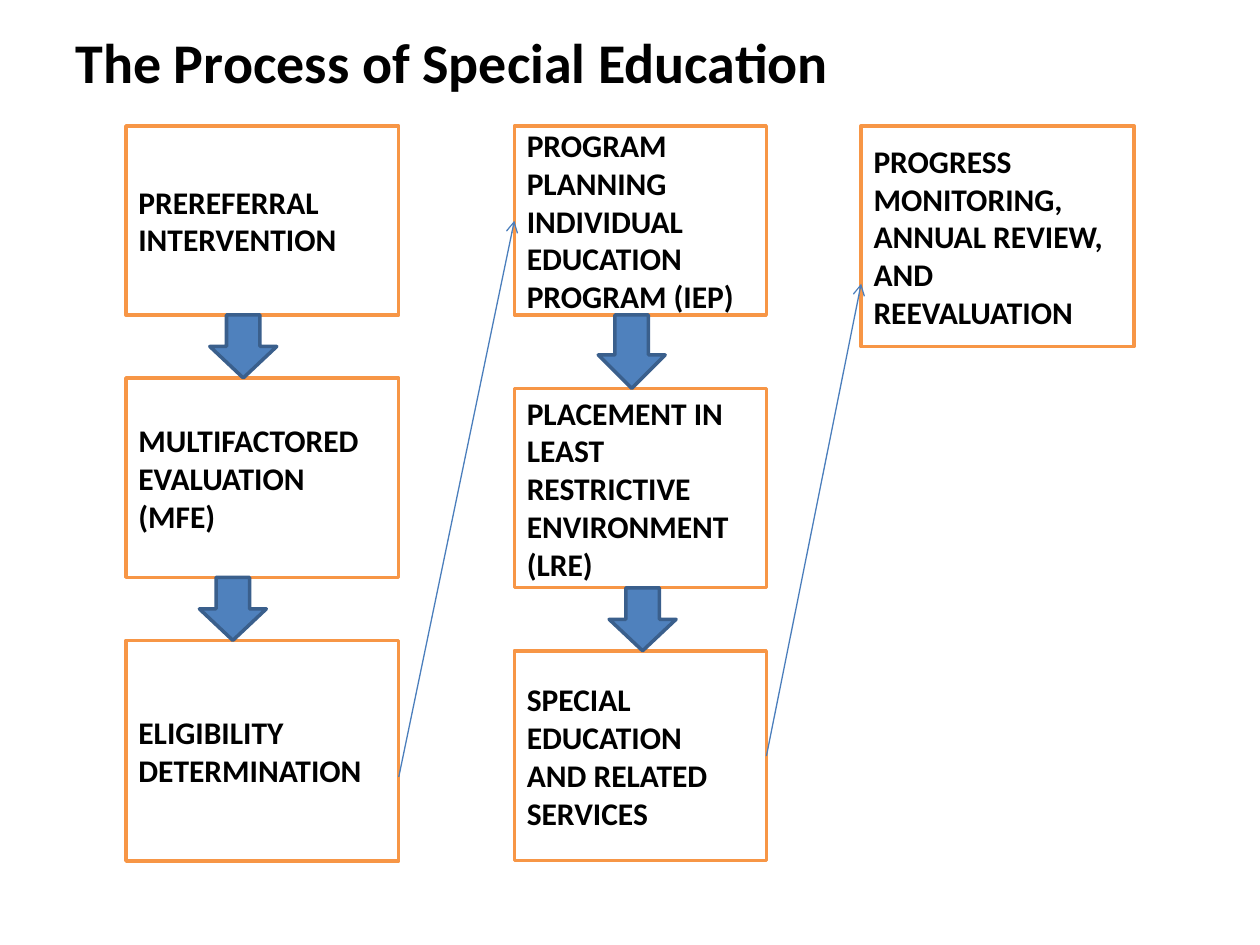
import pptx
import pptx.dml.color
import pptx.enum.shapes
import pptx.enum.text
import pptx.oxml.ns
import pptx.util
from lxml import etree

Cm, Pt = pptx.util.Cm, pptx.util.Pt
SHAPES = pptx.enum.shapes.MSO_SHAPE
ANCHOR = pptx.enum.text.MSO_ANCHOR

TITLE = "The Process of Special Education"

# Lengths in cm. Each step: top, height, lines of text.
# Each down arrow is given by its left edge and fills the gap between two steps.
COLUMNS = [
    {"left": 2.54, "width": 5.5, "arrows": [4.23, 4.02], "steps": [
        (2.54, 3.81, ["PREREFERRAL", "INTERVENTION"]),
        (7.62, 4.02, ["MULTIFACTORED", "EVALUATION (MFE)"]),
        (12.91, 4.45, ["ELIGIBILITY", "DETERMINATION"])]},
    {"left": 10.37, "width": 5.08, "arrows": [12.06, 12.28], "steps": [
        (2.54, 3.81, ["PROGRAM PLANNING", "INDIVIDUAL EDUCATION", "PROGRAM (IEP)"]),
        (7.83, 4.02, ["PLACEMENT IN LEAST", "RESTRICTIVE", "ENVIRONMENT (LRE)"]),
        (13.12, 4.23, ["SPECIAL EDUCATION", "AND RELATED SERVICES"])]},
    {"left": 17.36, "width": 5.5, "arrows": [], "steps": [
        (2.54, 4.45, ["PROGRESS MONITORING,", "ANNUAL REVIEW,", "AND REEVALUATION"])]},
]
# Start and end heights of the links from each column to the next
LINKS = [(15.66, 4.45), (15.24, 5.72)]
ARROW_WIDTH = 1.35
FONT = {"name": "Calibri", "bold": True}


def color(value):
    return pptx.dml.color.RGBColor.from_string(value)


def write(shape, lines, size, anchor):
    frame = shape.text_frame
    frame.word_wrap = True
    frame.vertical_anchor = anchor
    for number, line in enumerate(lines):
        para = frame.add_paragraph() if number else frame.paragraphs[0]
        para.alignment = pptx.enum.text.PP_ALIGN.LEFT
        span = para.add_run()
        span.text = line
        for key, value in {**FONT, "size": Pt(size)}.items():
            setattr(span.font, key, value)
        span.font.color.rgb = color("000000")


def add_block(page, kind, place, fill, line):
    block = page.shapes.add_shape(kind, *map(Cm, place))
    block.shadow.inherit = False
    block.fill.solid()
    block.fill.fore_color.rgb = color(fill)
    block.line.color.rgb = color(line)
    block.line.width = Pt(2)
    return block


def add_link(page, start, end):
    link = page.shapes.add_connector(
        pptx.enum.shapes.MSO_CONNECTOR.STRAIGHT, *map(Cm, start + end))
    link.line.color.rgb = color("4B7EBC")
    link.line.width = Pt(0.75)
    qn = pptx.oxml.ns.qn
    etree.SubElement(link.line._get_or_add_ln(), qn("a:tailEnd"), type="arrow")
    etree.SubElement(link._element.spPr, qn("a:effectLst"))


def main():
    deck = pptx.Presentation()
    deck.slide_width, deck.slide_height = Cm(25.4), Cm(19.05)
    page = deck.slides.add_slide(deck.slide_layouts[6])

    title = page.shapes.add_textbox(*map(Cm, (1.27, 0.43, 22.86, 1.7)))
    write(title, [TITLE], 32, ANCHOR.TOP)

    for column in COLUMNS:
        for top, height, lines in column["steps"]:
            place = (column["left"], top, column["width"], height)
            box = add_block(page, SHAPES.RECTANGLE, place, "FFFFFF", "F79646")
            write(box, lines, 18, ANCHOR.MIDDLE)

    for column in COLUMNS:
        steps = column["steps"]
        for left, upper, lower in zip(column["arrows"], steps, steps[1:]):
            bottom = upper[0] + upper[1]
            place = (left, bottom, ARROW_WIDTH, lower[0] - bottom)
            add_block(page, SHAPES.DOWN_ARROW, place, "4F81BD", "3A5F8C")

    for source, target, (start, end) in zip(COLUMNS, COLUMNS[1:], LINKS):
        add_link(page, (source["left"] + source["width"], start), (target["left"], end))

    deck.save("out.pptx")


if __name__ == "__main__":
    main()
